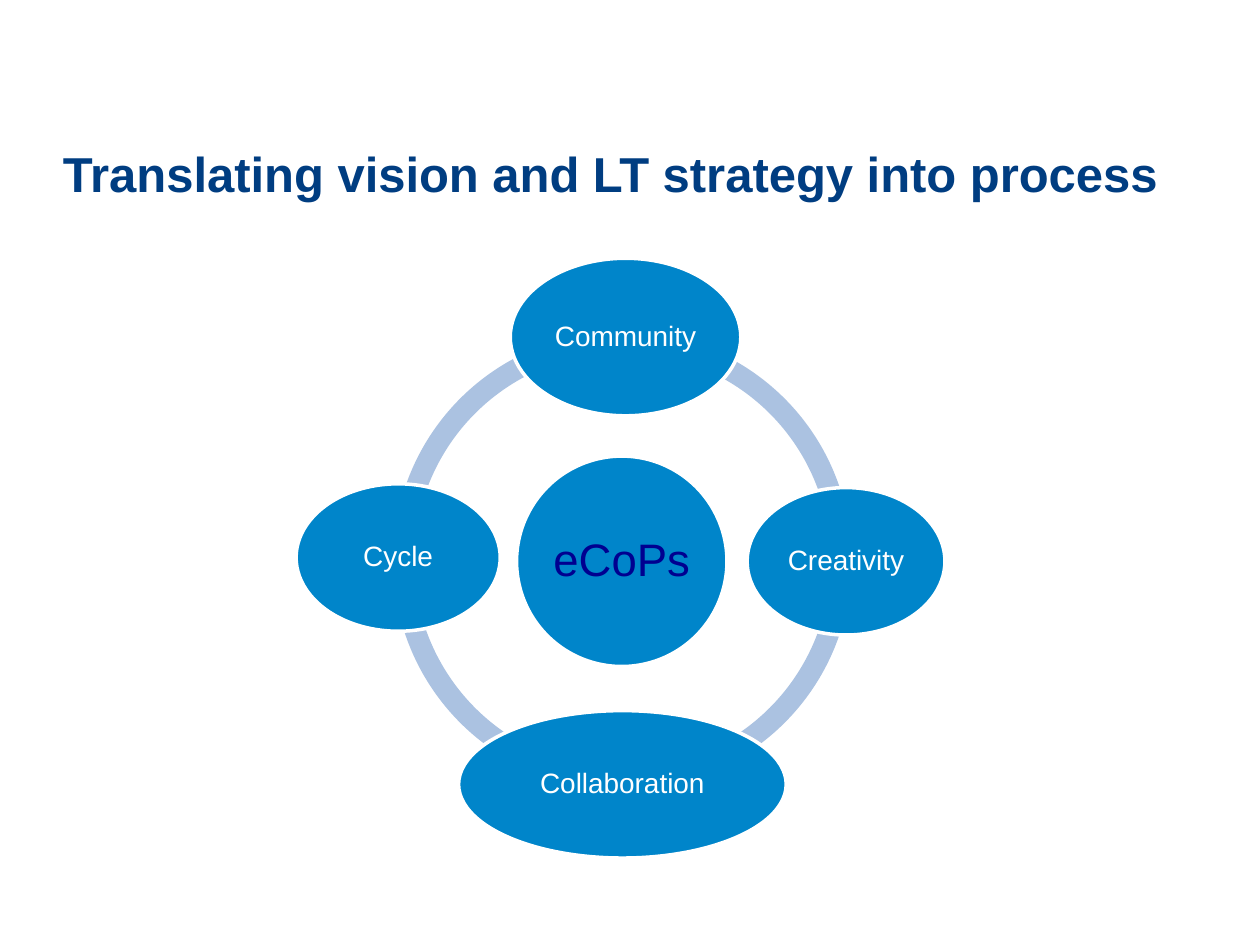
from pptx import Presentation
from pptx.dml.color import RGBColor
from pptx.enum.shapes import MSO_SHAPE
from pptx.enum.text import MSO_ANCHOR, PP_ALIGN
from pptx.util import Inches, Pt

NAVY = RGBColor(0x00, 0x3D, 0x81)
INK = RGBColor(0x00, 0x00, 0x90)
BLUE = RGBColor(0x00, 0x85, 0xCA)
PALE = RGBColor(0xAB, 0xC2, 0xE1)
WHITE = RGBColor(0xFF, 0xFF, 0xFF)

TITLE = "Translating vision and LT strategy into process"
RING = (3.12, 2.63, 3.64, 3.64)
ARCS = [(108.54, 162.55), (54, 108.54), (0, 54), (162.55, 0)]
THICK = 0.046
NODES = [
    ("eCoPs", (4.1, 3.62, 1.67, 1.67), 26, INK, 0.04),
    ("Community", (4.05, 2.05, 1.83, 1.25), 16, WHITE, 0.02),
    ("Creativity", (5.93, 3.87, 1.57, 1.17), 16, WHITE, 0.02),
    ("Collaboration", (3.64, 5.64, 2.6, 1.17), 16, WHITE, 0.02),
    ("Cycle", (2.35, 3.84, 1.62, 1.17), 16, WHITE, 0.02),
]


def add_shape(slide, kind, box, fill):
    shape = slide.shapes.add_shape(kind, *map(Inches, box))
    shape.shadow.inherit = False
    shape.fill.solid()
    shape.fill.fore_color.rgb = fill
    shape.line.fill.background()
    return shape


def set_text(shape, text, size, color, pads, bold=False):
    frame = shape.text_frame
    frame.word_wrap = True
    frame.vertical_anchor = MSO_ANCHOR.MIDDLE
    (frame.margin_left, frame.margin_top,
     frame.margin_right, frame.margin_bottom) = map(Inches, pads)
    para = frame.paragraphs[0]
    run = para.add_run()
    run.text = text
    run.font.name = "Arial"
    run.font.size = Pt(size)
    run.font.bold = bold
    run.font.color.rgb = color
    return para


def add_node(slide, text, box, size, color, pad):
    node = add_shape(slide, MSO_SHAPE.OVAL, box, BLUE)
    node.line.color.rgb = WHITE
    node.line.width = Pt(2)
    para = set_text(node, text, size, color, [pad] * 4)
    para.alignment = PP_ALIGN.CENTER
    para.line_spacing = 0.9


def main():
    deck = Presentation()
    deck.slide_width, deck.slide_height = Inches(10), Inches(7.5)
    slide = deck.slides.add_slide(deck.slide_layouts[6])
    title = slide.shapes.add_textbox(*map(Inches, (0.5, 1.07, 9, 0.56)))
    set_text(title, TITLE, 28, NAVY, (0, 0.05, 0, 0), True)
    for start, end in ARCS:
        arc = add_shape(slide, MSO_SHAPE.BLOCK_ARC, RING, PALE)
        for i, value in enumerate((start, end, THICK)):
            arc.adjustments[i] = value
    for node in NODES:
        add_node(slide, *node)
    deck.save("out.pptx")


if __name__ == "__main__":
    main()
